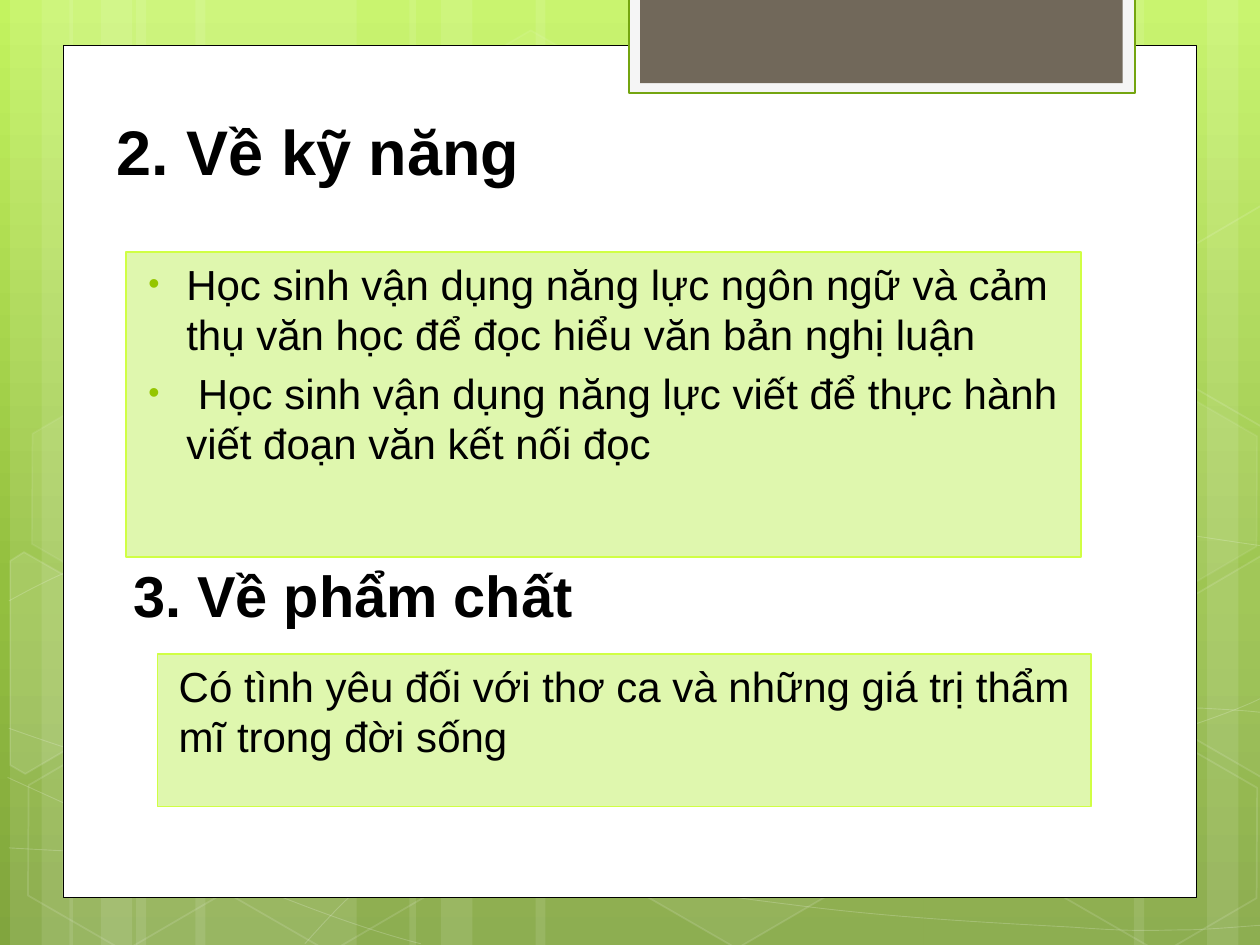
from copy import deepcopy
from math import cos, radians, sin

from lxml import etree
from pptx import Presentation
from pptx import util as u
from pptx.dml.color import RGBColor
from pptx.enum import shapes, text
from pptx.oxml.ns import qn

PX = 9144  # EMU in one px, 100 px to the inch
WIDTH, HEIGHT = 1000, 750
FONT = "Arial"
TILT = 30
COLORS = {
    "white": "FFFFFF", "black": "000000", "frame": "F5F5F5", "frame_line": "74A510",
    "tab": "71685A", "panel": "DFF7AE", "panel_line": "D0FF44", "bullet": "94C600",
    "top": "C3F35F", "middle": "93BF3F", "bottom": "81A53E",
}
BACKGROUND = [(0, "top"), (0.62, "middle"), (1, "bottom")]

# left, width of the pale vertical bands
BANDS = [
    (108, 175), (8, 50), (33, 83), (155, 175), (55, 50), (80, 83),
    (733, 175), (958, 50), (900, 83), (425, 308), (325, 50), (350, 83),
]
# start point, then pieces: six numbers for a Bézier curve, two for a line
CURVES = [
    [(7, 673), (61, 676, 115, 679, 190, 678), (265, 677, 358, 675, 458, 665),
     (558, 655, 700, 636, 792, 617), (883, 598, 977, 568, 1007, 551)],
    [(7, 477), (36, 461, 65, 446, 121, 431), (178, 416, 259, 394, 347, 387),
     (436, 380, 544, 379, 654, 387), (764, 395, 947, 426, 1007, 434)],
    [(6, 617), (127, 672, 247, 727, 334, 749)],
    [(7, 578), (38, 589, 70, 600, 128, 616), (186, 631, 273, 656, 357, 673),
     (440, 690, 545, 708, 628, 718), (711, 729, 800, 733, 853, 736),
     (905, 740, 919, 738, 945, 738), (971, 737, 989, 735, 1007, 734)],
    [(242, 749), (260, 729, 278, 709, 302, 691), (326, 673, 360, 653, 388, 639),
     (416, 625, 433, 619, 470, 609), (506, 599, 573, 585, 608, 578),
     (644, 571, 649, 571, 680, 569), (711, 566, 760, 563, 794, 562),
     (829, 561, 886, 562, 886, 562), (953, 562),
     (971, 563, 988, 564, 997, 565), (1006, 566, 1003, 565, 1006, 566)],
]
# left, top, fill opacity, line opacity
HEXAGONS = [
    (334, 36, 4, 8), (497, 589, 6, 12), (11, 591, 0, 12), (14, 312, 7, 8),
    (174, 592, 0, 12), (753, 453, 10, 12), (834, 593, 0, 12), (834, 314, 7, 8),
]
# centre, corner points as seen after tilting, fill opacity
CUT_HEXAGONS = [
    ((36, 535), [(8, 445), (19, 438), (96, 482), (95, 570), (20, 614), (8, 607)], 10),
    ((985, 520), [(926, 485), (1001, 441), (1009, 446), (1009, 613), (1002, 617),
                  (926, 573)], 4),
    ((985, 241), [(926, 207), (1001, 163), (1010, 168), (1009, 335), (1002, 339),
                  (926, 295)], 0),
]
# box, fill, line, line width
CARDS = [
    ((50, 36, 900, 676), "white", "black", 0.5),
    ((499, -2, 402, 76), "frame", "frame_line", 1.25),
    ((508, -2, 383, 68), "tab", None, 0),
]
HEADINGS = [
    ((83, 67, 369, 87), "2. Về kỹ năng", 36),
    ((96, 417, 369, 87), "3. Về phẩm chất", 33),
]
# box, paragraphs, left indent, first line indent, bulleted
PANELS = [
    ((100, 200, 758, 242), [
        "Học sinh vận dụng năng lực ngôn ngữ và cảm thụ văn học để đọc hiểu văn bản nghị luận",
        " Học sinh vận dụng năng lực viết để thực hành viết đoạn văn kết nối đọc",
    ], 38, -30, True),
    ((125, 519, 741, 121), [
        "Có tình yêu đối với thơ ca và những giá trị thẩm mĩ trong đời sống",
    ], 7, 0, False),
]


def rgb(name):
    return RGBColor.from_string(COLORS[name])


def set_opacity(fill_parent, percent):
    color = fill_parent.find(qn("a:solidFill")).find(qn("a:srgbClr"))
    etree.SubElement(color, qn("a:alpha")).set("val", str(percent * 1000))


def paint(shape, fill=None, line=None, width=1, fill_opacity=100, line_opacity=100):
    shape.shadow.inherit = False
    if fill and fill_opacity:
        shape.fill.solid()
        shape.fill.fore_color.rgb = rgb(fill)
        if fill_opacity < 100:
            set_opacity(shape.element.spPr, fill_opacity)
    else:
        shape.fill.background()
    if line:
        shape.line.color.rgb = rgb(line)
        shape.line.width = u.Pt(width)
        if line_opacity < 100:
            set_opacity(shape.element.spPr.find(qn("a:ln")), line_opacity)
    else:
        shape.line.fill.background()


def add_preset(slide, box, kind=shapes.MSO_SHAPE.RECTANGLE):
    return slide.shapes.add_shape(kind, *(v * PX for v in box))


def add_outline(slide, points, close):
    points = [(round(x * PX), round(y * PX)) for x, y in points]
    builder = slide.shapes.build_freeform(*points[0])
    builder.add_line_segments(points[1:], close=close)
    return builder.convert_to_shape()


def add_curve(slide, start, *pieces):
    """Draw lines between the end points, then bend those that have control points."""
    curve = add_outline(slide, [start] + [piece[-2:] for piece in pieces], False)
    lines = list(curve.element.iter(qn("a:lnTo")))
    for line, piece in zip(lines, pieces):
        if len(piece) == 2:
            continue
        bend = etree.Element(qn("a:cubicBezTo"))
        for x, y in zip(piece[::2], piece[1::2]):
            point = etree.SubElement(bend, qn("a:pt"))
            point.set("x", str(x * PX - curve.left))
            point.set("y", str(y * PX - curve.top))
        line.getparent().replace(line, bend)
    return curve


def add_tilted_outline(slide, center, points):
    """Turn the points back around the centre, then tilt the whole shape."""
    cosine, sine = cos(radians(TILT)), sin(radians(TILT))
    offsets = [(x - center[0], y - center[1]) for x, y in points]
    upright = [(center[0] + x * cosine + y * sine, center[1] - x * sine + y * cosine)
               for x, y in offsets]
    outline = add_outline(slide, upright, True)
    outline.rotation = TILT
    return outline


def format_runs(paragraph, size, bold=False):
    paragraph.alignment = text.PP_ALIGN.LEFT
    for run in paragraph.runs:
        run.font.name = FONT
        run.font.size = u.Pt(size)
        run.font.bold = bold
        run.font.color.rgb = rgb("black")


def add_bullet(properties):
    color = etree.SubElement(properties, qn("a:buClr"))
    etree.SubElement(color, qn("a:srgbClr")).set("val", COLORS["bullet"])
    etree.SubElement(properties, qn("a:buSzPct")).set("val", "76000")
    etree.SubElement(properties, qn("a:buFont")).set("typeface", FONT)
    etree.SubElement(properties, qn("a:buChar")).set("char", "•")


def draw_background(slide):
    fill = slide.background.fill
    fill.gradient()
    fill.gradient_angle = 270
    last_stop = list(slide.element.iter(qn("a:gs")))[-1]
    last_stop.addnext(deepcopy(last_stop))
    for stop, (position, color) in zip(fill.gradient_stops, BACKGROUND):
        stop.position = position
        stop.color.rgb = rgb(color)

    for left, width in BANDS:
        paint(add_preset(slide, (left, 0, width, HEIGHT)), "white", fill_opacity=10)
    for curve in CURVES:
        paint(add_curve(slide, *curve), line="white", width=0.5, line_opacity=20)
    for left, top, fill_opacity, line_opacity in HEXAGONS:
        hexagon = add_preset(slide, (left, top, 175, 152), shapes.MSO_SHAPE.HEXAGON)
        hexagon.adjustments[0] = 0.285
        hexagon.rotation = TILT
        paint(hexagon, "white", "white", 1, fill_opacity, line_opacity)
    for center, points, fill_opacity in CUT_HEXAGONS:
        paint(add_tilted_outline(slide, center, points), "white", "white", 1, fill_opacity, 12)


def add_text(slide, box, lines, size, bold, anchor):
    box_shape = slide.shapes.add_textbox(*(v * PX for v in box))
    frame = box_shape.text_frame
    frame.word_wrap = True
    frame.vertical_anchor = anchor
    frame.text = "\n".join(lines)
    for paragraph in frame.paragraphs:
        format_runs(paragraph, size, bold)
    return box_shape


def add_panel(slide, box, lines, indent, first_indent, bulleted):
    panel = add_text(slide, box, lines, 24, False, text.MSO_ANCHOR.TOP)
    paint(panel, "panel", "panel_line", 0.75)
    for paragraph in panel.text_frame.paragraphs:
        paragraph.space_before = u.Pt(4.8)
        properties = paragraph._p.get_or_add_pPr()
        properties.set("marL", str(indent * PX))
        properties.set("indent", str(first_indent * PX))
        if bulleted:
            add_bullet(properties)


def main():
    presentation = Presentation()
    presentation.slide_width, presentation.slide_height = WIDTH * PX, HEIGHT * PX
    slide = presentation.slides.add_slide(presentation.slide_layouts[6])
    draw_background(slide)
    for box, fill, line, width in CARDS:
        paint(add_preset(slide, box), fill, line, width)
    for (box, words, size), panel in zip(HEADINGS, PANELS):
        add_text(slide, box, [words], size, True, text.MSO_ANCHOR.BOTTOM)
        add_panel(slide, *panel)
    presentation.save("out.pptx")


if __name__ == "__main__":
    main()
